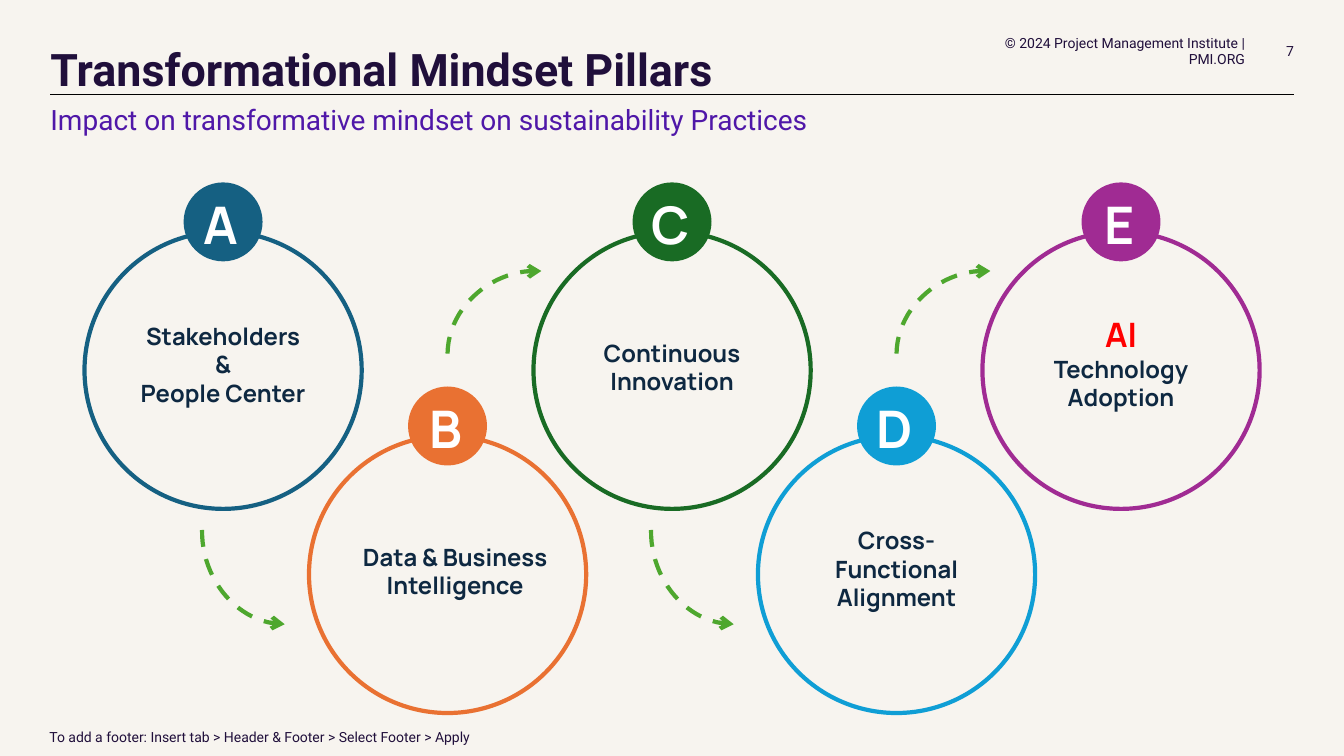
from lxml import etree
from pptx import Presentation
from pptx.dml.color import RGBColor
from pptx.enum.dml import MSO_LINE
from pptx.enum.shapes import MSO_CONNECTOR, MSO_SHAPE
from pptx.enum.text import MSO_ANCHOR as ANCHOR, PP_ALIGN as ALIGN
from pptx.oxml.ns import qn
from pptx.util import Pt

INK = RGBColor(0x20, 0x0F, 0x3B)
PURPLE = RGBColor(0x4F, 0x17, 0xA8)
NAVY = RGBColor(0x0E, 0x28, 0x41)
RED = RGBColor(0xFF, 0x00, 0x00)
ARROW_GREEN = RGBColor(0x4E, 0xA7, 0x2E)
WHITE = RGBColor(0xFF, 0xFF, 0xFF)
BLACK = RGBColor(0x00, 0x00, 0x00)
PAPER = RGBColor(0xF7, 0xF4, 0xEF)
BLUE = RGBColor(0x15, 0x60, 0x82)
ORANGE = RGBColor(0xE9, 0x71, 0x32)
GREEN = RGBColor(0x19, 0x6B, 0x24)
CYAN = RGBColor(0x0F, 0x9E, 0xD5)
MAGENTA = RGBColor(0xA0, 0x2B, 0x93)

# Content: text, box (left, top, width, height), size, colour, bold, alignment, anchor
PAGE_TEXTS = [
    ("Transformational Mindset Pillars", (36, 33.84, 888, 34.56),
     32, INK, True, ALIGN.LEFT, ANCHOR.TOP),
    ("Impact on transformative mindset on sustainability Practices",
     (36, 73.44, 888, 24.5), 20, PURPLE, False, ALIGN.LEFT, ANCHOR.TOP),
    ("© 2024 Project Management Institute | PMI.ORG",
     (690.5, 24.5, 198.7, 23.8), 10, INK, False, ALIGN.RIGHT, ANCHOR.MIDDLE),
    ("7", (890, 24.5, 34.2, 23.8), 10, INK, False, ALIGN.RIGHT, ANCHOR.MIDDLE),
    ("To add a footer: Insert tab > Header & Footer > Select Footer > Apply",
     (35.3, 503.3, 888, 28.8), 10, INK, False, ALIGN.LEFT, ANCHOR.BOTTOM),
]
# Letter, colour, label lines, label (shift right, width, height, bottom below ring centre)
PILLARS = [
    ("A", BLUE, ["Stakeholders", "&", "People Center"], (0, 148, 69, 30)),
    ("B", ORANGE, ["Data & Business Intelligence"], (5.4, 160, 48, 21.5)),
    ("C", GREEN, ["Continuous Innovation"], (0, 148, 48, 21.5)),
    ("D", CYAN, ["Cross-Functional Alignment"], (0, 148, 69, 30)),
    ("E", MAGENTA, ["AI", "Technology Adoption"], (0, 148, 78, 33)),
]
ACCENT_LINE = "AI"

# Layout: pillars alternate between two rows
FIRST_X, PITCH_X = 159.35, 160.35
ROW_Y = (264.5, 410.3)
RING, BADGE, BADGE_RISE = 198, 56.4, 106
# Bezier points of the arrow to the next pillar, from the ring centre
ARROW_DOWN = [(-15, 114.1), (-15.5, 149.6), (10.8, 181.4), (44, 181.4)]
ARROW_UP = [(0, -157.7), (0.7, -193), (34.5, -219), (67, -216.7)]
ARROW_STEPS = 24

prs = Presentation()
prs.slide_width, prs.slide_height = Pt(960), Pt(540)
slide = prs.slides.add_slide(prs.slide_layouts[6])
slide.background.fill.solid()
slide.background.fill.fore_color.rgb = PAPER
shapes = slide.shapes


def set_font(paragraph, name, size, color, bold):
    font = paragraph.font
    font.name, font.size, font.bold = name, Pt(size), bold
    font.color.rgb = color


def add_text(box, lines, anchor, align):
    frame = shapes.add_textbox(*map(Pt, box)).text_frame
    frame.word_wrap = True
    frame.vertical_anchor = anchor
    frame.text = "\n".join(lines)
    for paragraph in frame.paragraphs:
        paragraph.alignment = align
    return frame


def clear_insets(frame):
    frame.margin_left = frame.margin_top = frame.margin_right = frame.margin_bottom = 0


def add_circle(x, y, diameter):
    circle = shapes.add_shape(MSO_SHAPE.OVAL, Pt(x - diameter / 2), Pt(y - diameter / 2),
                              Pt(diameter), Pt(diameter))
    circle.shadow.inherit = False
    return circle


def bezier(points, t):
    weights = ((1 - t) ** 3, 3 * t * (1 - t) ** 2, 3 * t * t * (1 - t), t ** 3)
    return tuple(sum(w * p[axis] for w, p in zip(weights, points)) for axis in (0, 1))


def add_arrow(x, y, controls):
    curve = [bezier(controls, i / ARROW_STEPS) for i in range(ARROW_STEPS + 1)]
    start, *rest = [(Pt(x + dx), Pt(y + dy)) for dx, dy in curve]
    builder = shapes.build_freeform(*start)
    builder.add_line_segments(rest, close=False)
    arrow = builder.convert_to_shape()
    arrow.shadow.inherit = False
    arrow.fill.background()
    arrow.line.color.rgb = ARROW_GREEN
    arrow.line.width = Pt(3)
    arrow.line.dash_style = MSO_LINE.DASH
    etree.SubElement(arrow.line._get_or_add_ln(), qn("a:tailEnd"), type="arrow")


# Header and footer
rule = shapes.add_connector(MSO_CONNECTOR.STRAIGHT, Pt(36), Pt(67.2), Pt(924), Pt(67.2))
rule.line.color.rgb = BLACK
rule.line.width = Pt(0.5)
etree.SubElement(rule._element.spPr, qn("a:effectLst"))

for text, box, size, color, bold, align, anchor in PAGE_TEXTS:
    frame = add_text(box, [text], anchor, align)
    clear_insets(frame)
    set_font(frame.paragraphs[0], "Roboto", size, color, bold)
    if size == 32:
        frame.paragraphs[0].line_spacing = 0.9

# Pillars: ring, lettered badge, label, arrow to the next
for i, (letter, color, lines, (shift, width, height, bottom)) in enumerate(PILLARS):
    x, y = FIRST_X + i * PITCH_X, ROW_Y[i % 2]
    ring = add_circle(x, y, RING)
    ring.fill.background()
    ring.line.color.rgb = color
    ring.line.width = Pt(3)

    badge = add_circle(x, y - BADGE_RISE, BADGE)
    badge.fill.solid()
    badge.fill.fore_color.rgb = color
    badge.line.fill.background()
    frame = badge.text_frame
    clear_insets(frame)
    frame.margin_top, frame.margin_right = Pt(2.6), Pt(2.6)
    frame.word_wrap = False
    frame.vertical_anchor = ANCHOR.MIDDLE
    frame.text = letter
    frame.paragraphs[0].alignment = ALIGN.CENTER
    set_font(frame.paragraphs[0], "Manrope", 37, WHITE, True)

    label = add_text((x + shift - width / 2, y + bottom - height, width, height),
                     lines, ANCHOR.BOTTOM, ALIGN.CENTER)
    for paragraph in label.paragraphs:
        accent = paragraph.text == ACCENT_LINE
        set_font(paragraph, "Manrope", 24 if accent else 17, RED if accent else NAVY, True)

    if i < len(PILLARS) - 1:
        add_arrow(x, y, ARROW_UP if i % 2 else ARROW_DOWN)

prs.save("out.pptx")
